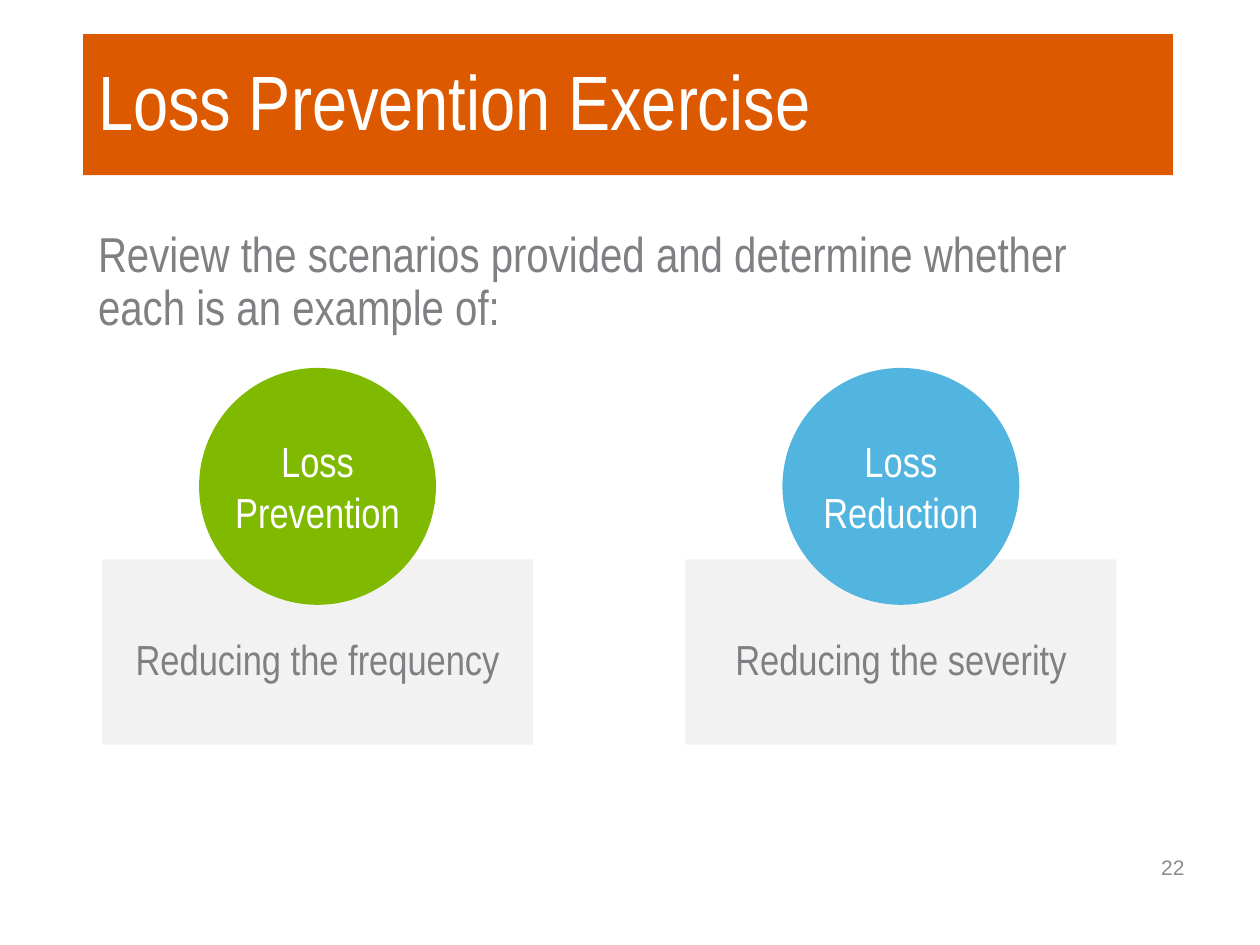
from pptx import Presentation
from pptx.dml.color import RGBColor
from pptx.enum.shapes import MSO_SHAPE
from pptx.enum.text import MSO_ANCHOR, PP_ALIGN
from pptx.util import Inches, Pt

RECTANGLE, OVAL = MSO_SHAPE.RECTANGLE, MSO_SHAPE.OVAL
TOP, MIDDLE = MSO_ANCHOR.TOP, MSO_ANCHOR.MIDDLE
LEFT, CENTER, RIGHT = PP_ALIGN.LEFT, PP_ALIGN.CENTER, PP_ALIGN.RIGHT
WHITE, GRAY = "FFFFFF", "808084"


def add_filled_shape(kind, left, top, width, height, color):
    shape = slide.shapes.add_shape(
        kind, Inches(left), Inches(top), Inches(width), Inches(height))
    shape.shadow.inherit = False
    shape.fill.solid()
    shape.fill.fore_color.rgb = RGBColor.from_string(color)
    shape.line.fill.background()
    return shape


def write_text(shape, text, size, color, anchor=MIDDLE, alignment=LEFT,
               spacing=0.9, font_name="Arial Narrow"):
    frame = shape.text_frame
    frame.word_wrap = True
    frame.vertical_anchor = anchor
    paragraph = frame.paragraphs[0]
    paragraph.alignment = alignment
    paragraph.line_spacing = spacing
    run = paragraph.add_run()
    run.text = text
    run.font.name = font_name
    run.font.size = Pt(size)
    run.font.color.rgb = RGBColor.from_string(color)
    return frame


presentation = Presentation()
presentation.slide_width = Inches(10)
presentation.slide_height = Inches(7.5)
slide = presentation.slides.add_slide(presentation.slide_layouts[6])

add_filled_shape(RECTANGLE, 0.66, 0.27, 8.65, 1.12, "DD5900")

page_number = slide.shapes.add_textbox(
    Inches(7.17), Inches(6.68), Inches(2.33), Inches(0.4))
write_text(page_number, "22", 12, "8C8C8C", alignment=RIGHT, spacing=1.0,
           font_name="Arial")

title = slide.shapes.add_textbox(
    Inches(0.68), Inches(0.16), Inches(8.62), Inches(1.36))
write_text(title, "Loss Prevention Exercise", 44, WHITE)

instructions = slide.shapes.add_textbox(
    Inches(0.68), Inches(1.78), Inches(8.62), Inches(1.39))
write_text(
    instructions,
    "Review the scenarios provided and determine whether each is an example of:",
    28, GRAY, anchor=TOP)

card_width, circle_size = 3.42, 1.88
concepts = [
    (0.81, "Loss Prevention", "Reducing the frequency", "7FBA00"),
    (5.44, "Loss Reduction", "Reducing the severity", "51B5E0"),
]
for card_left, name, effect, color in concepts:
    card = add_filled_shape(RECTANGLE, card_left, 4.44, card_width, 1.47, "F2F2F2")
    card_frame = write_text(card, effect, 24, GRAY, anchor=TOP, alignment=CENTER)
    card_frame.margin_top = Inches(0.63)

    circle_left = card_left + (card_width - circle_size) / 2
    circle = add_filled_shape(OVAL, circle_left, 2.92, circle_size, circle_size, color)
    circle_frame = write_text(circle, name, 24, WHITE, alignment=CENTER, spacing=1.0)
    circle_frame.margin_left = circle_frame.margin_right = 0
    circle_frame.margin_top = circle_frame.margin_bottom = 0

presentation.save("out.pptx")
